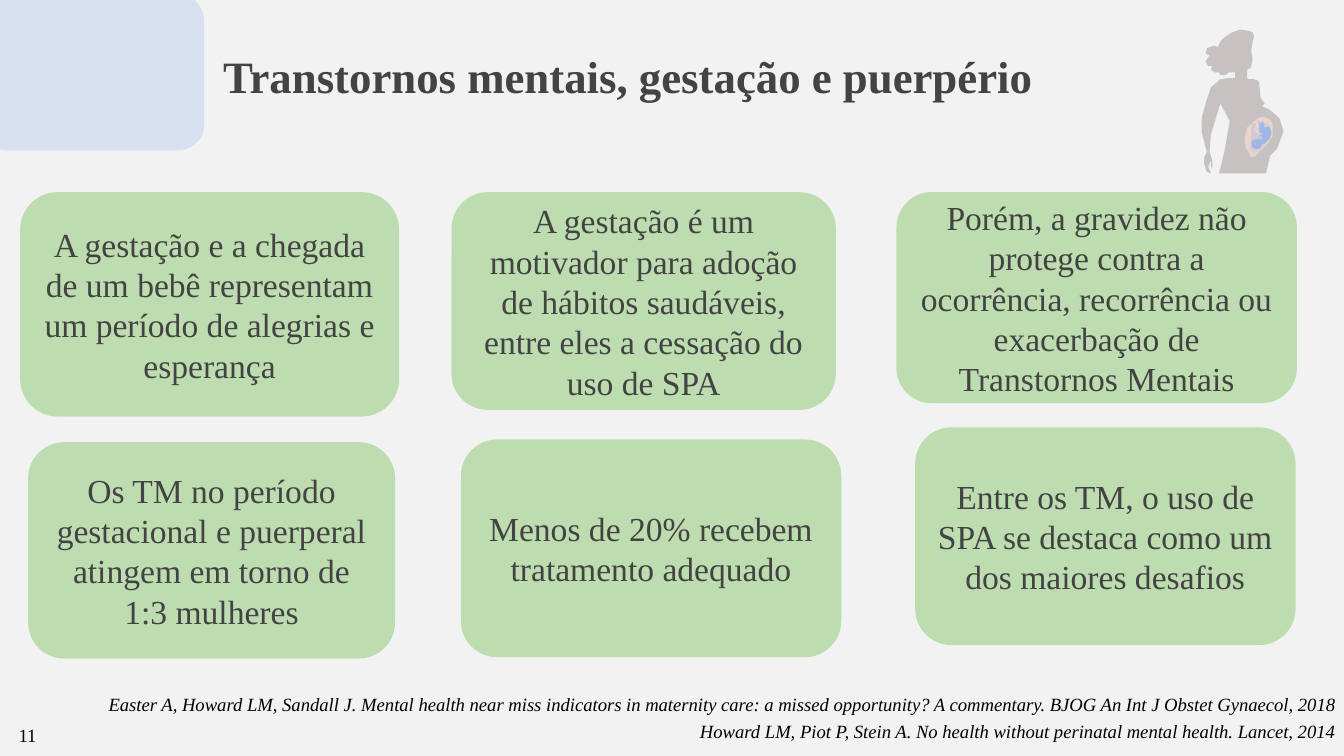
from lxml import etree
from pptx import Presentation
from pptx.dml.color import RGBColor
from pptx.enum import shapes, text
from pptx.oxml import ns
from pptx.util import Inches, Pt

COLORS = {
    "background": "F2F2F2", "blue": "8CB1EE", "green": "ABD59A",
    "ink": "434343", "black": "000000", "body": "C6C2C2", "womb": "F2D9CF",
}
FONT = "Times New Roman"

TITLE = "Transtornos mentais, gestação e puerpério"
# left, top, width, height, side inset, wording
CARDS = [
    (0.15, 1.43, 2.82, 1.67, 0.07,
     "A gestação e a chegada de um bebê representam um período de alegrias e esperança"),
    (3.36, 1.43, 2.86, 1.62, 0.1,
     "A gestação é um motivador para adoção de hábitos saudáveis, "
     "entre eles a cessação do uso de SPA"),
    (6.67, 1.43, 2.98, 1.57, 0.1,
     "Porém, a gravidez não protege contra a ocorrência, recorrência "
     "ou exacerbação de Transtornos Mentais"),
    (0.21, 3.29, 2.73, 1.61, 0.1,
     "Os TM no período gestacional e puerperal atingem em torno de 1:3 mulheres"),
    (3.43, 3.27, 2.83, 1.62, 0.1, "Menos de 20% recebem tratamento adequado"),
    (6.81, 3.18, 2.83, 1.62, 0.07,
     "Entre os TM, o uso de SPA se destaca como um dos maiores desafios"),
]
REFERENCES = [
    "Easter A, Howard LM, Sandall J. Mental health near miss indicators in maternity care: "
    "a missed opportunity? A commentary. BJOG An Int J Obstet Gynaecol, 2018",
    "Howard LM, Piot P, Stein A. No health without perinatal mental health. Lancet, 2014",
]

# Outlines of the pregnant figure, in hundredths of an inch
BODY = [
    (923, 22), (917, 24), (912, 27), (908, 31), (906, 35), (903, 34), (898, 36),
    (897, 40), (900, 41), (897, 46), (899, 49), (902, 49), (901, 52), (904, 54),
    (907, 54), (908, 56), (912, 56), (914, 54), (919, 54), (919, 58), (915, 58),
    (908, 59), (901, 65), (897, 77), (894, 88), (894, 98), (898, 113), (896, 117),
    (896, 122), (898, 128), (901, 129), (899, 124), (901, 119), (901, 124),
    (902, 125), (902, 120), (900, 113), (901, 100), (908, 77), (915, 90),
    (911, 113), (907, 129), (942, 129), (945, 116), (950, 111), (955, 98),
    (952, 88), (945, 82), (939, 79), (941, 77), (938, 73), (937, 62), (936, 60),
    (933, 59), (929, 59), (928, 58), (928, 52), (931, 50), (932, 44), (931, 38),
    (932, 31), (933, 27), (932, 24), (929, 23),
]
WOMB = [
    (940, 87), (936, 88), (928, 95), (926, 103), (927, 110), (931, 117), (933, 117),
    (944, 106), (947, 101), (947, 93), (945, 89),
]
FETUS_SHADE = [
    (933, 91), (931, 94), (931, 106), (930, 110), (931, 112), (933, 113), (938, 111),
    (944, 104), (946, 98), (945, 94), (943, 92), (936, 95), (935, 96), (938, 99),
    (938, 100), (934, 98), (934, 94), (935, 92),
]
FETUS = [
    (939, 90), (938, 92), (936, 90), (937, 94), (937, 99), (941, 99), (939, 100),
    (937, 101), (937, 102), (939, 101), (939, 104), (938, 103), (937, 104),
    (936, 103), (935, 104), (933, 104), (931, 106), (932, 110), (935, 111),
    (938, 110), (939, 107), (941, 107), (945, 103), (946, 99), (945, 95),
    (944, 94), (940, 95), (941, 92),
]


def rgb(name):
    return RGBColor.from_string(COLORS[name])


def paint(sp, color, alpha=100):
    """Fill a shape, with opacity in percent, and drop its line and shadow."""
    sp.fill.solid()
    sp.fill.fore_color.rgb = rgb(color)
    sp.line.fill.background()
    sp.shadow.inherit = False
    if alpha < 100:
        clr = sp.fill._xPr.find(".//" + ns.qn("a:srgbClr"))
        etree.SubElement(clr, ns.qn("a:alpha"), val=str(alpha * 1000))


def write(tf, lines, color, frame=None, para=None, **font):
    """Fill a text frame with one paragraph a line, all formatted alike."""
    for key, value in {"word_wrap": True, **(frame or {})}.items():
        setattr(tf, key, value)
    for i, line in enumerate(lines):
        p = tf.paragraphs[0] if i == 0 else tf.add_paragraph()
        for key, value in (para or {}).items():
            setattr(p, key, value)
        r = p.add_run()
        r.text = line
        for key, value in {"name": FONT, **font}.items():
            setattr(r.font, key, value)
        r.font.color.rgb = rgb(color)


def rounded_box(s, box, color, alpha):
    sp = s.shapes.add_shape(shapes.MSO_SHAPE.ROUNDED_RECTANGLE, *map(Inches, box))
    paint(sp, color, alpha)
    return sp


def add_title(s):
    sp = s.shapes.title
    sp.left, sp.top, sp.width, sp.height = map(Inches, (1.56, 0.26, 8.22, 0.76))
    frame = {"vertical_anchor": text.MSO_ANCHOR.TOP, "margin_top": Inches(0.1),
             "auto_size": text.MSO_AUTO_SIZE.NONE}
    write(sp.text_frame, [TITLE], "ink", frame,
          {"alignment": text.PP_ALIGN.LEFT}, size=Pt(24), bold=True)


def add_card(s, left, top, width, height, inset, wording):
    sp = rounded_box(s, (left, top, width, height), "green", 74)
    frame = {"vertical_anchor": text.MSO_ANCHOR.MIDDLE,
             "margin_left": Inches(inset), "margin_right": Inches(inset)}
    write(sp.text_frame, [wording], "ink", frame,
          {"alignment": text.PP_ALIGN.CENTER}, size=Pt(18))


def add_note(s, box, lines, frame=None, para=None, **font):
    sp = s.shapes.add_textbox(*map(Inches, box))
    write(sp.text_frame, lines, "black", frame, para, size=Pt(10), **font)


def add_figure(s):
    group = s.shapes.add_group_shape()
    for points, color, alpha in [(BODY, "body", 100), (WOMB, "womb", 84),
                                 (FETUS_SHADE, "blue", 25), (FETUS, "blue", 74)]:
        fb = group.shapes.build_freeform(*points[0], scale=Inches(0.01))
        fb.add_line_segments(points[1:], close=True)
        paint(fb.convert_to_shape(), color, alpha)


def main():
    prs = Presentation()
    prs.slide_width, prs.slide_height = Inches(10), Inches(10 * 9 / 16)
    s = prs.slides.add_slide(prs.slide_layouts[5])
    s.background.fill.solid()
    s.background.fill.fore_color.rgb = rgb("background")

    rounded_box(s, (-0.14, -0.04, 1.66, 1.16), "blue", 25)
    add_title(s)
    for card in CARDS:
        add_card(s, *card)
    add_note(s, (0.15, 4.84, 9.88, 0.77), REFERENCES,
             {"vertical_anchor": text.MSO_ANCHOR.BOTTOM, "margin_bottom": Inches(0.09)},
             {"alignment": text.PP_ALIGN.RIGHT, "line_spacing": 1.2}, italic=True)
    add_figure(s)
    add_note(s, (0.04, 5.34, 0.34, 0.27), ["11"], {"word_wrap": False})
    prs.save("out.pptx")


if __name__ == "__main__":
    main()
